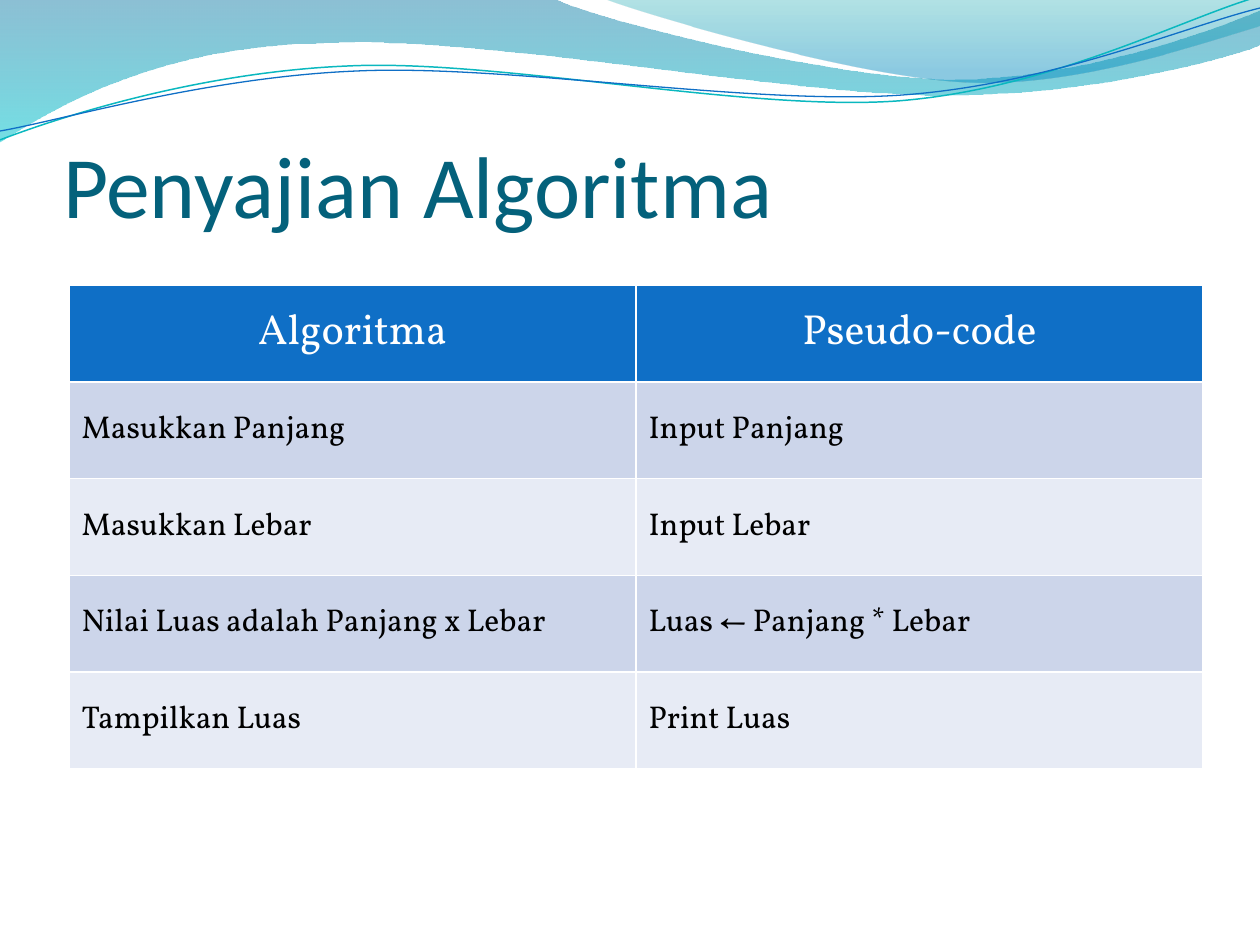
from math import cos, radians, sin

from lxml import etree
from pptx import Presentation
from pptx.dml.color import RGBColor
from pptx.enum.text import MSO_ANCHOR, MSO_AUTO_SIZE, PP_ALIGN
from pptx.oxml.ns import qn
from pptx.util import Pt

PX = 914400 / 126
LEFT, CENTER = PP_ALIGN.LEFT, PP_ALIGN.CENTER
MIDDLE, BOTTOM = MSO_ANCHOR.MIDDLE, MSO_ANCHOR.BOTTOM
NO_FIT = MSO_AUTO_SIZE.NONE

COLORS = {
    "title": "04617B", "head": "0F6FC6", "white": "FFFFFF", "black": "000000",
    "band": "CCD5EA", "pale": "E7EBF5", "sea": "0074A1", "aqua": "00C6CF",
    "teal": "00A1A9", "sky": "008BBF", "mint": "0AB8BF", "blue": "0F6FC6",
}

# Outlines in px: a pair is a straight step, six numbers are a Bezier curve
WAVES = [
    ([(0, 0), (554, -1), (600, 21, 837, 79, 955, 79),
      (1075, 79, 1207, 33, 1260, 11), (1261, 45),
      (1238, 55, 1096, 96, 940, 95), (784, 95, 481, 35, 324, 43),
      (163, 45, 58, 105, -1, 142), (0, 0)],
     [(0, "sea", 45), (1, "aqua", 55)]),
    ([(604, -1), (641, 14, 859, 78, 969, 82),
      (1079, 87, 1211, 40, 1260, 26), (1260, 0), (604, -1)],
     [(0, "teal", 30), (0.8, "sky", 45)]),
]
LINES = [
    ([(0, 140), (60, 117, 199, 72, 349, 66), (498, 59, 747, 112, 898, 101),
      (1050, 89, 1182, 19, 1257, -3)], "mint", 0.85),
    ([(0, 131), (59, 121, 207, 77, 357, 71), (508, 64, 752, 106, 903, 95),
      (1053, 84, 1186, 26, 1260, 8)], "blue", 0.75),
]
TILT = -2.7
PIVOT = (629, 73)
ROWS = [
    ("Algoritma", "Pseudo-code"),
    ("Masukkan Panjang", "Input Panjang"),
    ("Masukkan Lebar", "Input Lebar"),
    ("Nilai Luas adalah Panjang x Lebar", "Luas ← Panjang * Lebar"),
    ("Tampilkan Luas", "Print Luas"),
]


def emu(px):
    return round(px * PX)


def rgb(name):
    return RGBColor.from_string(COLORS[name])


def put(item, **values):
    for key, value in values.items():
        setattr(item, key, value)


def turn(point, angle):
    """Turn a point clockwise about the pivot."""
    dx, dy = point[0] - PIVOT[0], point[1] - PIVOT[1]
    c, s = cos(radians(angle)), sin(radians(angle))
    return PIVOT[0] + dx * c - dy * s, PIVOT[1] + dx * s + dy * c


class Deck:
    def __init__(self):
        self.prs = Presentation()
        put(self.prs, slide_width=emu(1260), slide_height=emu(945))
        self.slide = self.prs.slides.add_slide(self.prs.slide_layouts[5])
        self.shapes = self.slide.shapes

    def outline(self, steps, close, tilt=0):
        points = [turn(step[i:i + 2], -tilt)
                  for step in steps for i in range(0, len(step), 2)]
        points = [(emu(x), emu(y)) for x, y in points]
        maker = self.shapes.build_freeform(*points[0])
        maker.add_line_segments(points[1:], close=close)
        shape = maker.convert_to_shape()
        put(shape, rotation=tilt % 360)
        shape.shadow.inherit = False
        # Join each three steps of a curve into one Bezier
        marks = list(shape._element.iter(qn("a:lnTo")))
        for step in steps[1:]:
            first, *rest = [marks.pop(0) for _ in range(len(step) // 2)]
            if rest:
                curve = etree.Element(qn("a:cubicBezTo"))
                first.addprevious(curve)
                for mark in (first, *rest):
                    curve.append(mark[0])
                    mark.getparent().remove(mark)
        return shape

    def wave(self, steps, stops):
        shape = self.outline(steps, True)
        shape.line.fill.background()
        shape.fill.gradient()
        shape.fill.gradient_angle = 270
        for stop, (place, color, alpha) in zip(shape.fill.gradient_stops, stops):
            stop.position = place
            stop.color.rgb = rgb(color)
        tints = shape._element.iter(qn("a:srgbClr"))
        for tint, (_, _, alpha) in zip(tints, stops):
            etree.SubElement(tint, qn("a:alpha"), val=str(alpha * 1000))

    def line(self, steps, color, width):
        shape = self.outline(steps, False, TILT)
        shape.fill.background()
        shape.line.width = Pt(width)
        shape.line.color.rgb = rgb(color)

    def text(self, frame, words, size, font, color, align):
        para = frame.paragraphs[0]
        para.alignment = align
        run = para.add_run()
        put(run, text=words)
        put(run.font, size=Pt(size), name=font, bold=False)
        run.font.color.rgb = rgb(color)

    def title(self, words, x, y, w, h):
        title = self.shapes.title
        put(title, left=emu(x), top=emu(y), width=emu(w), height=emu(h))
        put(title.text_frame, margin_left=0, margin_right=0, margin_bottom=0,
            margin_top=Pt(3.6), vertical_anchor=BOTTOM, word_wrap=True,
            auto_size=NO_FIT)
        self.text(title.text_frame, words, 50, "Calibri", "title", LEFT)
        self.shapes._spTree.append(title._element)

    def border(self, cell):
        props = cell._tc.get_or_add_tcPr()
        for side in "LRTB":
            edge = etree.SubElement(props, qn("a:ln" + side), w=str(Pt(1)))
            fill = etree.SubElement(edge, qn("a:solidFill"))
            etree.SubElement(fill, qn("a:srgbClr"), val=COLORS["white"])

    def table(self, rows, x, y, w, h):
        table = self.shapes.add_table(len(rows), len(rows[0]), emu(x), emu(y),
                                      emu(w), emu(h)).table
        for r, row in enumerate(rows):
            if r == 0:
                back, style = "head", (24, "Vollkorn", "white", CENTER)
            else:
                back = "band" if r % 2 else "pale"
                style = (18, "Vollkorn", "black", LEFT)
            for c, words in enumerate(row):
                cell = table.cell(r, c)
                cell.vertical_anchor = MIDDLE
                self.border(cell)
                cell.fill.solid()
                cell.fill.fore_color.rgb = rgb(back)
                self.text(cell.text_frame, words, *style)


def main():
    deck = Deck()
    # Waves along the top
    for wave in WAVES:
        deck.wave(*wave)
    for line in LINES:
        deck.line(*line)
    # Comparison table and title
    deck.table(ROWS, 69, 285, 1134, 484)
    deck.title("Penyajian Algoritma", 63, 97, 1134, 139)
    deck.prs.save("out.pptx")


if __name__ == "__main__":
    main()
